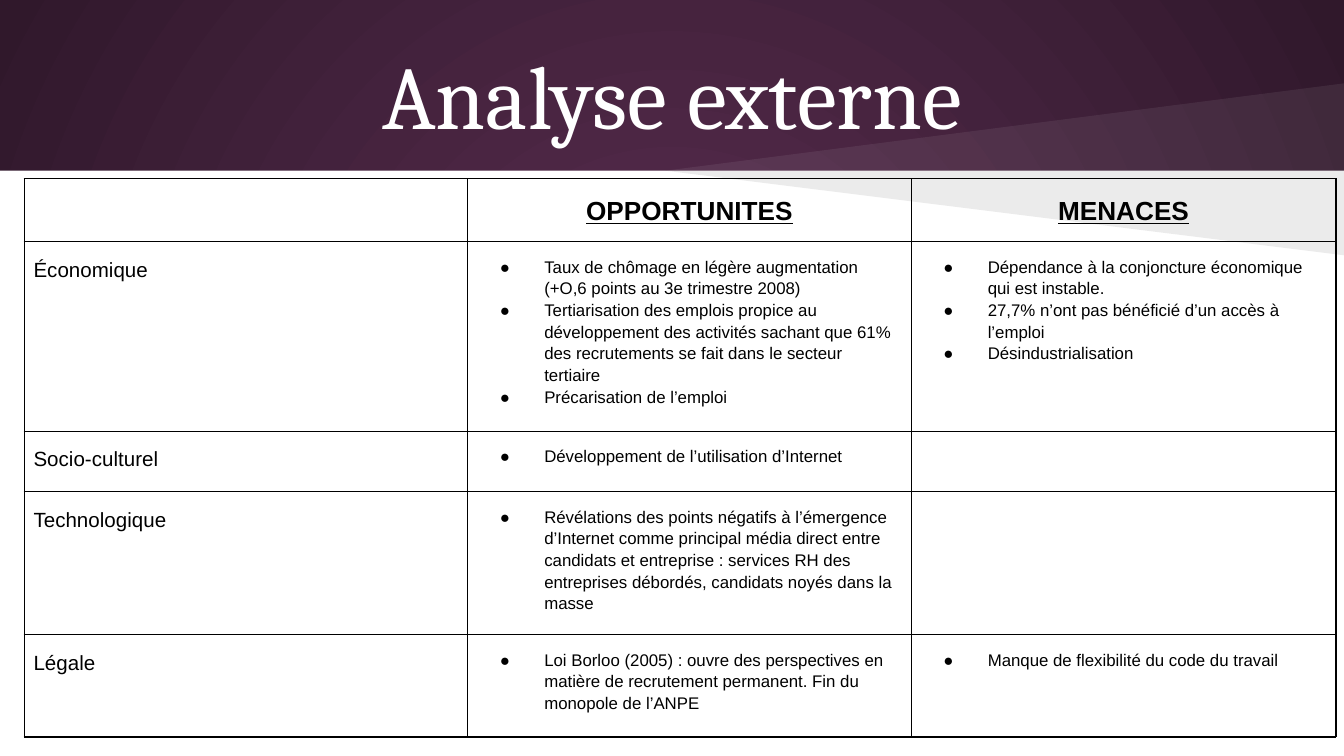
from lxml.etree import Element, SubElement as Sub
from pptx import Presentation
from pptx.dml.color import RGBColor as RGB
from pptx.enum.shapes import MSO_SHAPE as Shape
from pptx.enum.text import MSO_ANCHOR as Anchor, PP_ALIGN as Align
from pptx.oxml.ns import qn
from pptx.util import Inches, Pt

TITLE = "Analyse externe"
HEADS = ["", "OPPORTUNITES", "MENACES"]
ROWS = [
    ("Économique",
     ["Taux de chômage en légère augmentation (+O,6 points au 3e trimestre 2008)",
      "Tertiarisation des emplois propice au développement des activités "
      "sachant que 61% des recrutements se fait dans le secteur tertiaire",
      "Précarisation de l’emploi"],
     ["Dépendance à la conjoncture économique qui est instable.",
      "27,7% n’ont pas bénéficié d’un accès à l’emploi",
      "Désindustrialisation"]),
    ("Socio-culturel", ["Développement de l’utilisation d’Internet"], []),
    ("Technologique",
     ["Révélations des points négatifs à l’émergence d’Internet comme "
      "principal média direct entre candidats et entreprise : services RH "
      "des entreprises débordés, candidats noyés dans la masse"], []),
    ("Légale",
     ["Loi Borloo (2005) : ouvre des perspectives en matière de recrutement "
      "permanent. Fin du monopole de l’ANPE"],
     ["Manque de flexibilité du code du travail"]),
]
WIDTHS = [3.3, 3.3, 3.16]
HEIGHTS = [0.42, 1.37, 0.45, 1.06, 0.76]
WIDE = 10
HIGH = WIDE * 9 / 16
EDGE = 1.27
WEDGES = [(0.62, "white", 7), (1.9, "black", 8)]
THEME = {
    "white": "FFFFFF", "black": "000000", "glow": "592D50", "dusk": "30182B",
    "serif": "Cambria", "sans": "Arial",
    "title": 48, "head": 14, "label": 11, "item": 9, "rule": 0.75,
}


def tint(name):
    return RGB.from_string(THEME[name])


def write(frame, lines, size, font="sans", color="black", align=Align.LEFT,
          bold=False, under=False, bullet=False, space=1.15):
    for i, line in enumerate(lines):
        para = frame.add_paragraph() if i else frame.paragraphs[0]
        para.alignment, para.line_spacing = align, space
        run = para.add_run()
        run.text = line
        face = run.font
        face.name, face.size = THEME[font], Pt(THEME[size])
        face.bold, face.underline = bold, under
        face.color.rgb = tint(color)
        if bullet:
            props = para._p.get_or_add_pPr()
            props.set("marL", str(Inches(0.5)))
            props.set("indent", str(Inches(-0.33)))
            Sub(Sub(props, qn("a:buClr")), qn("a:srgbClr"), val=THEME[color])
            Sub(props, qn("a:buFont"), typeface=THEME[font])
            Sub(props, qn("a:buChar"), char="●")


def paint(shape, color, alpha=100):
    shape.shadow.inherit = False
    shape.fill.solid()
    shape.fill.fore_color.rgb = tint(color)
    shape.line.fill.background()
    if alpha < 100:
        mark = shape._element.spPr.find(".//" + qn("a:srgbClr"))
        Sub(mark, qn("a:alpha"), val=str(alpha * 1000))


def glow(slide):
    fill = slide.background.fill
    fill.gradient()
    for stop, name, place in zip(fill.gradient_stops, ("glow", "dusk"), (0, 1)):
        stop.color.rgb, stop.position = tint(name), place
    grad = slide._element.find(".//" + qn("a:gradFill"))
    grad.remove(grad.find(qn("a:lin")))
    ring = Sub(grad, qn("a:path"), path="circle")
    Sub(ring, qn("a:fillToRect"), {side: "50000" for side in "ltrb"})


def backdrop(slide):
    glow(slide)
    panel = slide.shapes.add_shape(
        Shape.RECTANGLE, 0, Inches(EDGE), Inches(WIDE), Inches(HIGH - EDGE))
    paint(panel, "white")
    for tip, color, alpha in WEDGES:
        start, *rest = [(Inches(x), Inches(y)) for x, y in
                        ((4.95, EDGE), (WIDE, EDGE), (WIDE, tip))]
        pen = slide.shapes.build_freeform(*start)
        pen.add_line_segments(rest)
        paint(pen.convert_to_shape(), color, alpha)


def frame_cell(cell):
    cell.fill.background()
    props = cell._tc.get_or_add_tcPr()
    for i, side in enumerate("LRTB"):
        line = Element(qn("a:ln" + side), w=str(Pt(THEME["rule"])))
        Sub(Sub(line, qn("a:solidFill")), qn("a:srgbClr"), val=THEME["black"])
        props.insert(i, line)


def fill_cell(cell, lines, size, **style):
    frame_cell(cell)
    if lines:
        cell.margin_left = cell.margin_right = Inches(0.07)
        cell.margin_top = cell.margin_bottom = Inches(0.1)
        write(cell.text_frame, lines, size, **style)


def add_grid(slide):
    holder = slide.shapes.add_table(
        len(HEIGHTS), len(WIDTHS), Inches(0.18), Inches(1.33),
        Inches(sum(WIDTHS)), Inches(sum(HEIGHTS)))
    grid = holder.table
    grid.first_row = grid.horz_banding = False
    for col, width in zip(grid.columns, WIDTHS):
        col.width = Inches(width)
    for row, height in zip(grid.rows, HEIGHTS):
        row.height = Inches(height)
    holder.height = Inches(4.15)
    for c, head in enumerate(HEADS):
        fill_cell(grid.cell(0, c), [head] if head else [], "head",
                  align=Align.CENTER, bold=True, under=True)
    for r, (label, *lists) in enumerate(ROWS, 1):
        fill_cell(grid.cell(r, 0), [label], "label")
        for c, items in enumerate(lists, 1):
            fill_cell(grid.cell(r, c), items, "item", bullet=True)


def add_title(slide):
    box = slide.shapes.add_textbox(
        Inches(0.5), Inches(0.23), Inches(9), Inches(0.94))
    frame = box.text_frame
    frame.word_wrap, frame.vertical_anchor = True, Anchor.MIDDLE
    frame.margin_left = frame.margin_right = Inches(0.1)
    frame.margin_top = frame.margin_bottom = Inches(0.1)
    write(frame, [TITLE], "title", font="serif", color="white",
          align=Align.CENTER, space=1.0)


def main():
    """Build the external analysis slide."""
    deck = Presentation()
    deck.slide_width, deck.slide_height = Inches(WIDE), Inches(HIGH)
    slide = deck.slides.add_slide(deck.slide_layouts[6])
    backdrop(slide)
    add_title(slide)
    add_grid(slide)
    deck.save("out.pptx")


if __name__ == "__main__":
    main()
